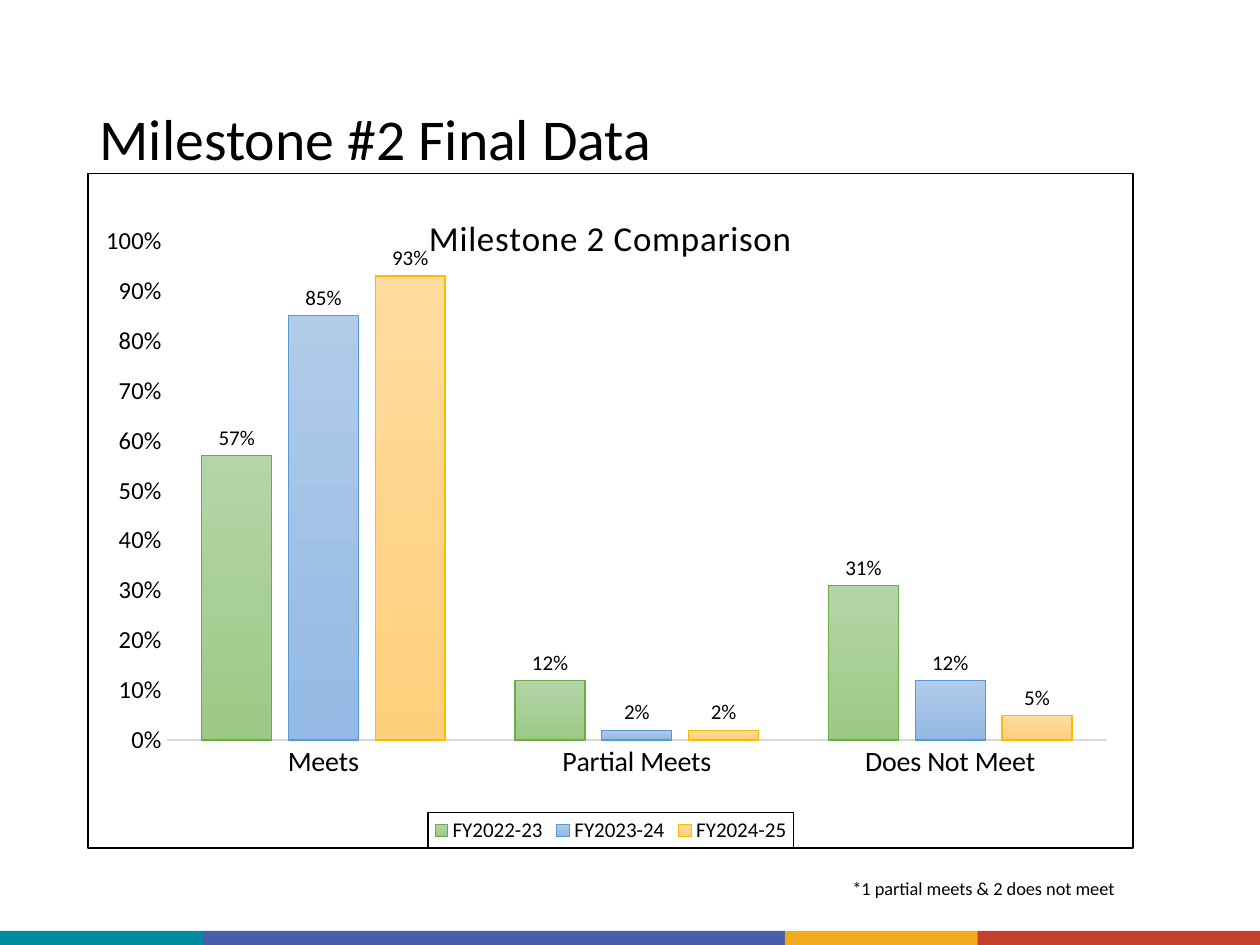
import pptx
import pptx.chart.data
import pptx.dml.color
import pptx.enum.chart
import pptx.enum.shapes
import pptx.enum.text
import pptx.oxml
import pptx.oxml.ns
import pptx.util

Pt = pptx.util.Pt
RGB = pptx.dml.color.RGBColor
enum = pptx.enum.chart
qn = pptx.oxml.ns.qn
BLACK = RGB(0, 0, 0)
GREY = RGB(0xD9, 0xD9, 0xD9)
TEAL = RGB(0x00, 0x8C, 0xA0)
BLUE = RGB(0x45, 0x5F, 0xA9)
GOLD = RGB(0xEF, 0xAA, 0x1F)
RED = RGB(0xC6, 0x3F, 0x28)
BARS = [(0, 116, TEAL), (116, 332.5, BLUE), (448.5, 110, GOLD), (558.5, 161.5, RED)]
CATS = ["Meets", "Partial Meets", "Does Not Meet"]
SERIES = [
    ("FY2022-23", (0.57, 0.12, 0.31),
     RGB(0xB5, 0xD5, 0xA7), RGB(0x9C, 0xC9, 0x87), RGB(0x6E, 0xA9, 0x45)),
    ("FY2023-24", (0.85, 0.02, 0.12),
     RGB(0xB1, 0xCB, 0xE9), RGB(0x93, 0xB9, 0xE4), RGB(0x59, 0x98, 0xD0)),
    ("FY2024-25", (0.93, 0.02, 0.05),
     RGB(0xFF, 0xDB, 0x9E), RGB(0xFF, 0xD0, 0x7C), RGB(0xF9, 0xBC, 0x00)),
]


class Deck:
    """Hold the text style and the current slide, and add elements to it."""

    def __init__(self, face="Calibri", ink=BLACK):
        self.face, self.ink = face, ink
        self.prs = pptx.Presentation()
        self.prs.slide_width, self.prs.slide_height = Pt(720), Pt(540)
        self.slide = self.prs.slides.add_slide(self.prs.slide_layouts[5])

    def style(self, font, size):
        font.name, font.size, font.bold = self.face, Pt(size), False
        font.color.rgb = self.ink

    def title(self, text, box, size):
        shape = self.slide.shapes.title
        shape.left, shape.top, shape.width, shape.height = map(Pt, box)
        frame = shape.text_frame
        frame.text = text
        frame.word_wrap = True
        frame.vertical_anchor = pptx.enum.text.MSO_ANCHOR.MIDDLE
        para = frame.paragraphs[0]
        para.alignment = pptx.enum.text.PP_ALIGN.LEFT
        para.line_spacing = 0.9
        self.style(para.runs[0].font, size)

    def note(self, text, box, size):
        frame = self.slide.shapes.add_textbox(*map(Pt, box)).text_frame
        frame.word_wrap = True
        frame.text = text
        self.style(frame.paragraphs[0].runs[0].font, size)

    def bar(self, box, color):
        kind = pptx.enum.shapes.MSO_SHAPE.RECTANGLE
        shape = self.slide.shapes.add_shape(kind, *map(Pt, box))
        shape.shadow.inherit = False
        shape.fill.solid()
        shape.fill.fore_color.rgb = color
        shape.line.fill.background()

    def place(self, node, index, inner=False, **dims):
        for old in node.findall(qn("c:layout")):
            node.remove(old)
        tags = '<c:layoutTarget val="inner"/>' if inner else ""
        tags += '<c:xMode val="edge"/><c:yMode val="edge"/>'
        tags += "".join(f'<c:{key} val="{val}"/>' for key, val in dims.items())
        node.insert(index, pptx.oxml.parse_xml(
            f'<c:layout {pptx.oxml.ns.nsdecls("c")}>'
            f"<c:manualLayout>{tags}</c:manualLayout></c:layout>"))

    def border(self, width):
        return pptx.oxml.parse_xml(
            f'<c:spPr {pptx.oxml.ns.nsdecls("c", "a")}><a:noFill/>'
            f'<a:ln w="{Pt(width)}"><a:solidFill><a:srgbClr val="{self.ink}"/>'
            "</a:solidFill></a:ln></c:spPr>")

    def chart(self, head, box, cats, rows):
        data = pptx.chart.data.CategoryChartData(number_format="0%")
        data.categories = cats
        for name, vals, *_ in rows:
            data.add_series(name, vals)
        kind = enum.XL_CHART_TYPE.COLUMN_CLUSTERED
        chart = self.slide.shapes.add_chart(kind, *map(Pt, box), data).chart
        self.style(chart.font, 10)
        space = chart.element
        space.find(qn("c:chart")).addnext(self.border(1))
        self.place(space.find(".//" + qn("c:plotArea")), 0, True,
                   x=0.075, y=0.1, w=0.9, h=0.74)
        self.head(chart, head)
        self.legend(chart)
        self.axes(chart)
        plot = chart.plots[0]
        plot.gap_width, plot.overlap = 100, -24
        plot.vary_by_categories = False
        for series, row in zip(plot.series, rows):
            self.series(series, *row[2:])

    def head(self, chart, text):
        chart.has_title = True
        frame = chart.chart_title.text_frame
        frame.text = text
        run = frame.paragraphs[0].runs[0]
        self.style(run.font, 20)
        run.font._element.set("spc", "30")
        self.place(space_title(chart), 1, x=0.32, y=0.05)

    def legend(self, chart):
        chart.has_legend = True
        legend = chart.legend
        legend.position = enum.XL_LEGEND_POSITION.BOTTOM
        legend.include_in_layout = False
        self.style(legend.font, 12)
        node = chart.element.find(".//" + qn("c:legend"))
        self.place(node, 1, x=0.325, y=0.947, w=0.35, h=0.053)
        node.find(qn("c:txPr")).addprevious(self.border(0.75))

    def axes(self, chart):
        for axis, size in ((chart.category_axis, 16), (chart.value_axis, 14)):
            axis.has_major_gridlines = False
            axis.major_tick_mark = enum.XL_TICK_MARK.NONE
            axis.minor_tick_mark = enum.XL_TICK_MARK.NONE
            self.style(axis.tick_labels.font, size)
        line = chart.category_axis.format.line
        line.color.rgb, line.width = GREY, Pt(0.75)
        axis = chart.value_axis
        axis.minimum_scale, axis.maximum_scale, axis.major_unit = 0, 1, 0.1
        axis.format.line.fill.background()
        axis.tick_labels.number_format = "0%"
        axis.tick_labels.number_format_is_linked = False

    def series(self, series, light, dark, edge):
        fill = series.format.fill
        fill.gradient()
        fill.gradient_angle = 270
        for stop, color, pos in zip(fill.gradient_stops, (light, dark), (0, 1)):
            stop.color.rgb, stop.position = color, pos
        line = series.format.line
        line.color.rgb, line.width = edge, Pt(0.75)
        labels = series.data_labels
        labels.show_value = True
        labels.position = enum.XL_LABEL_POSITION.OUTSIDE_END
        labels.number_format = "0%"
        labels.number_format_is_linked = False
        self.style(labels.font, 12)


def space_title(chart):
    """Return the title node of a chart."""
    return chart.element.find(qn("c:chart")).find(qn("c:title"))


def main():
    """Build the slide and save it."""
    deck = Deck()
    for left, width, color in BARS:
        deck.bar((left, 532, width, 8), color)
    deck.title("Milestone #2 Final Data", (49.7, 28.8, 620.6, 104.4), 33)
    deck.chart("Milestone 2 Comparison", (50, 98.7, 598, 386.5), CATS, SERIES)
    deck.note("*1 partial meets & 2 does not meet", (480, 497.5, 168.5, 20), 10.5)
    deck.prs.save("out.pptx")


if __name__ == "__main__":
    main()
